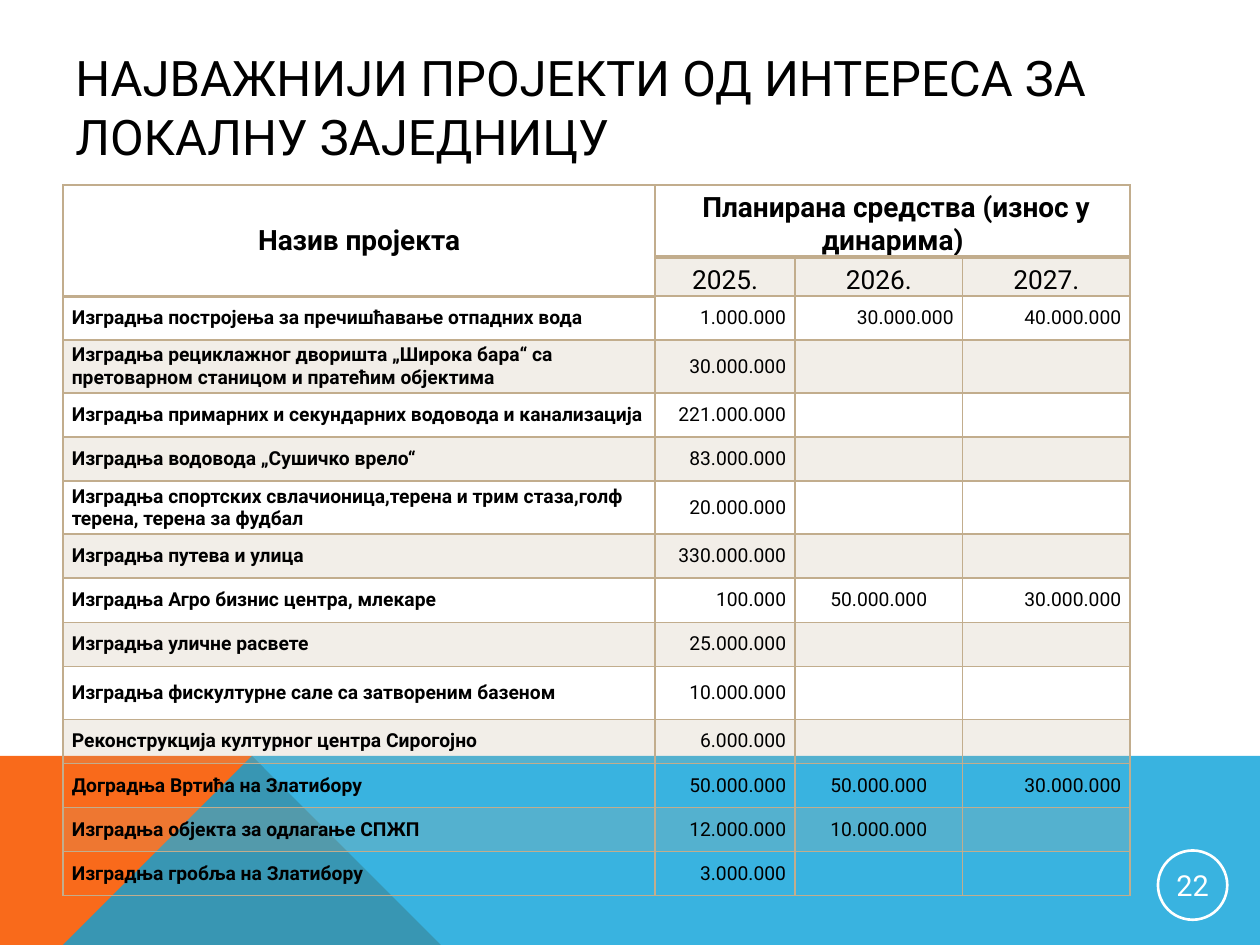
import pptx
import pptx.dml.color
import pptx.enum.shapes
import pptx.enum.text
import pptx.oxml
import pptx.oxml.ns
import pptx.util
from dataclasses import dataclass

Inches = pptx.util.Inches
ALIGN = pptx.enum.text.PP_ALIGN
ANCHOR = pptx.enum.text.MSO_ANCHOR


@dataclass(frozen=True)
class Theme:
    font: str = "Roboto"
    ink: str = "000000"
    white: str = "FFFFFF"
    orange: str = "F96A1B"
    blue: str = "08A1D9"
    sand: str = "C2AD8D"
    title_size: float = 28
    header_size: float = 16
    year_size: float = 15
    body_size: float = 11
    number_size: float = 16.5


THEME = Theme()
COLUMN_WIDTHS = (4.7, 1.11, 1.33, 1.33)
HEADER_HEIGHTS = (0.57, 0.31)
ROW_HEIGHT, TALL_ROW_HEIGHT = 0.35, 0.42
TALL_PROJECTS = (1, 4, 8)
YEARS = ("2025.", "2026.", "2027.")
PROJECTS = (
    ("Изградња постројења за пречишћавање отпадних вода", "1.000.000", "30.000.000", "40.000.000"),
    ("Изградња рециклажног дворишта „Широка бара“ са претоварном станицом и пратећим објектима", "30.000.000"),
    ("Изградња примарних и секундарних водовода и канализација", "221.000.000"),
    ("Изградња водовода „Сушичко врело“", "83.000.000"),
    ("Изградња спортских свлачионица,терена и трим стаза,голф терена, терена за фудбал", "20.000.000"),
    ("Изградња путева и улица", "330.000.000"),
    ("Изградња Агро бизнис центра, млекаре", "100.000", "50.000.000", "30.000.000"),
    ("Изградња уличне расвете", "25.000.000"),
    ("Изградња фискултурне сале са затвореним базеном", "10.000.000"),
    ("Реконструкција културног центра Сирогојно", "6.000.000"),
    ("Доградња Вртића на Златибору", "50.000.000", "50.000.000", "30.000.000"),
    ("Изградња објекта за одлагање СПЖП", "12.000.000", "10.000.000"),
    ("Изградња гробља на Златибору", "3.000.000"),
)


def rgb(color):
    return pptx.dml.color.RGBColor.from_string(color)


def apply_format(target, values):
    for name, value in values.items():
        setattr(target, name, value)


def write_text(frame, text, size, color=THEME.ink, bold=False, align=ALIGN.LEFT):
    para = frame.paragraphs[0]
    para.alignment = align
    span = para.add_run()
    span.text = text
    apply_format(span.font, {"name": THEME.font, "size": pptx.util.Pt(size), "bold": bold})
    span.font.color.rgb = rgb(color)


def fill_solid(fill, element, color, opacity=100):
    fill.solid()
    fill.fore_color.rgb = rgb(color)
    if opacity < 100:
        tint = element.xpath(".//a:solidFill/a:srgbClr")[0]
        alpha = pptx.oxml.parse_xml(
            f'<a:alpha {pptx.oxml.ns.nsdecls("a")} val="{opacity * 1000}"/>')
        tint.append(alpha)


def add_polygon(page, points, color, opacity=100):
    builder = page.shapes.build_freeform(*points[0], scale=Inches(1))
    builder.add_line_segments(points[1:], close=True)
    shape = builder.convert_to_shape()
    shape.shadow.inherit = False
    shape.line.fill.background()
    fill_solid(shape.fill, shape._element, color, opacity)


def add_title(page, text):
    box = page.shapes.add_textbox(Inches(0.5), Inches(0.3), Inches(9), Inches(1.09))
    apply_format(box.text_frame, {"word_wrap": True, "vertical_anchor": ANCHOR.MIDDLE})
    write_text(box.text_frame, text, THEME.title_size)


def add_page_number(page, text):
    badge = page.shapes.add_shape(pptx.enum.shapes.MSO_SHAPE.OVAL, Inches(9.19),
                                  Inches(6.75), Inches(0.55), Inches(0.55))
    badge.shadow.inherit = False
    badge.fill.background()
    badge.line.color.rgb = rgb(THEME.white)
    badge.line.width = pptx.util.Pt(1.5)
    sides = ("margin_left", "margin_top", "margin_right", "margin_bottom")
    apply_format(badge.text_frame, dict.fromkeys(sides, Inches(0.01)))
    badge.text_frame.vertical_anchor = ANCHOR.MIDDLE
    write_text(badge.text_frame, text, THEME.number_size, THEME.white, align=ALIGN.CENTER)


def set_borders(cell, top, bottom):
    properties = cell._tc.get_or_add_tcPr()
    widths = {"lnL": 1, "lnR": 1, "lnT": top, "lnB": bottom}
    for index, (tag, width) in enumerate(widths.items()):
        properties.insert(index, pptx.oxml.parse_xml(
            f'<a:{tag} {pptx.oxml.ns.nsdecls("a")} w="{pptx.util.Pt(width)}">'
            f'<a:solidFill><a:srgbClr val="{THEME.sand}"/></a:solidFill></a:{tag}>'))


def format_cell(cell, row, column):
    apply_format(cell, {
        "margin_left": Inches(0.07), "margin_right": Inches(0.07),
        "margin_top": 0, "margin_bottom": 0,
        "vertical_anchor": ANCHOR.BOTTOM if row < 2 and column else ANCHOR.MIDDLE})
    # Every second row is tinted, except under the merged heading
    if row % 2 and (row, column) != (1, 0):
        fill_solid(cell.fill, cell._tc, THEME.sand, 20)
    else:
        cell.fill.background()
    # Heavier rules close the two headings
    top = 2 if row == 1 or (row, column) == (2, 0) else 1
    bottom = 2 if row == 0 or (row, column) == (1, 0) else 1
    set_borders(cell, top, bottom)


def add_project_table(page):
    heights = HEADER_HEIGHTS + tuple(
        TALL_ROW_HEIGHT if index in TALL_PROJECTS else ROW_HEIGHT
        for index in range(len(PROJECTS)))
    frame = page.shapes.add_table(len(heights), len(COLUMN_WIDTHS), Inches(0.5), Inches(1.47),
                                  Inches(sum(COLUMN_WIDTHS)), Inches(sum(heights)))
    table = frame.table
    apply_format(table, {"first_row": False, "horz_banding": False})
    for column, width in zip(table.columns, COLUMN_WIDTHS):
        column.width = Inches(width)
    for row, height in enumerate(heights):
        table.rows[row].height = Inches(height)
        for column in range(len(COLUMN_WIDTHS)):
            format_cell(table.cell(row, column), row, column)

    # Headings
    table.cell(0, 0).merge(table.cell(1, 0))
    table.cell(0, 1).merge(table.cell(0, 3))
    headings = ("Назив пројекта", " Планирана средства (износ у динарима)")
    for column, text in enumerate(headings):
        write_text(table.cell(0, column).text_frame, text, THEME.header_size,
                   bold=True, align=ALIGN.CENTER)
    for column, year in enumerate(YEARS, 1):
        write_text(table.cell(1, column).text_frame, year, THEME.year_size, align=ALIGN.CENTER)

    # Projects: amounts sit right, but the 2026 column is centred after the first project
    for row, project in enumerate(PROJECTS, 2):
        for column, text in enumerate(project):
            align = ALIGN.RIGHT if column else ALIGN.LEFT
            if column == 2 and row > 2:
                align = ALIGN.CENTER
            write_text(table.cell(row, column).text_frame, text, THEME.body_size,
                       bold=column == 0, align=align)


def main():
    deck = pptx.Presentation()
    deck.slide_width, deck.slide_height = Inches(10), Inches(7.5)
    page = deck.slides.add_slide(deck.slide_layouts[6])
    fill_solid(page.background.fill, page._element, THEME.white)

    # Coloured foot of the page
    add_polygon(page, [(0, 7.5), (0, 5.52), (2.23, 5.52), (3.91, 7.5)], THEME.orange)
    add_polygon(page, [(0, 7.5), (2.23, 5.52), (10, 5.53), (10, 7.5)], THEME.blue, 80)

    # Content
    add_title(page, "НАЈВАЖНИЈИ ПРОЈЕКТИ ОД ИНТЕРЕСА ЗА ЛОКАЛНУ ЗАЈЕДНИЦУ")
    add_project_table(page)
    add_page_number(page, "22")
    deck.save("out.pptx")


if __name__ == "__main__":
    main()
